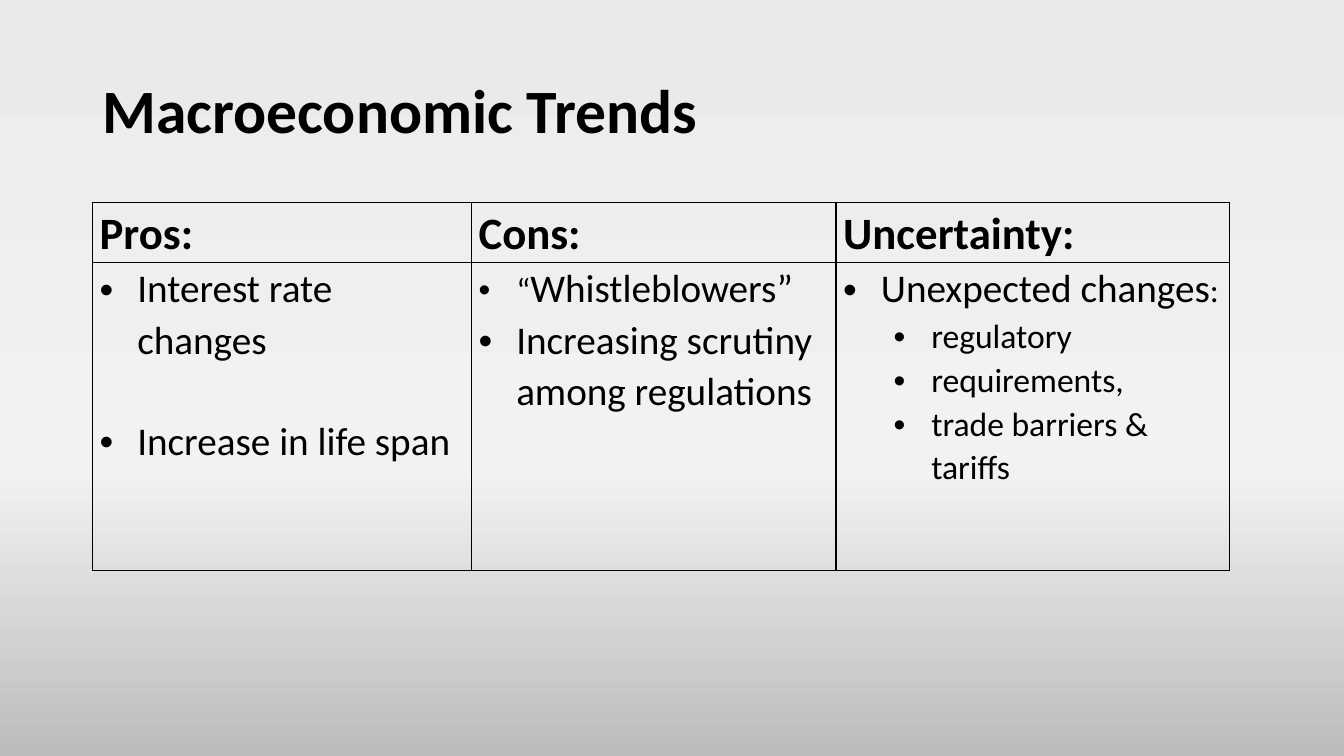
"""Build the Macroeconomic Trends slide."""
from copy import deepcopy
from dataclasses import dataclass

from lxml import etree
from pptx import Presentation
from pptx.dml.color import RGBColor
from pptx.enum.text import MSO_ANCHOR
from pptx.oxml.ns import qn
from pptx.util import Cm, Pt

MIDDLE = MSO_ANCHOR.MIDDLE


@dataclass(frozen=True)
class Theme:
    """Colours, font and type sizes of the slide."""

    font: str = "Calibri"
    ink: str = "000000"
    backdrop: tuple = ((0, "EBEAEA"), (0.62, "F2F2F2"), (1, "BDBCBC"))
    title: int = 44
    heading: int = 32
    body: int = 28
    detail: int = 24
    title_spacing: float = 0.9
    table_spacing: float = 1.07
    border: int = 1


THEME = Theme()
HANGING = Cm(0.95)
INDENTS = (HANGING, Cm(2.22))
COLUMN_WIDTHS = (Cm(9.55), Cm(9.19), Cm(9.91))
ROW_HEIGHTS = (Cm(1.5), Cm(7.77))

# Each point is (level, space before in points, runs of text and size).
TRENDS = {
    "Pros:": [
        (0, 0, [("Interest rate changes", THEME.body)]),
        (0, 36, [("Increase in life span", THEME.body)]),
    ],
    "Cons:": [
        (0, 0, [("“", THEME.detail), ("Whistleblowers”", THEME.body)]),
        (0, 0, [("Increasing scrutiny among regulations", THEME.body)]),
    ],
    "Uncertainty:": [
        (0, 0, [("Unexpected changes", THEME.body), (":", THEME.detail)]),
        (1, 0, [("regulatory", THEME.detail)]),
        (1, 0, [("requirements,", THEME.detail)]),
        (1, 0, [("trade barriers & tariffs", THEME.detail)]),
    ],
}


def paint_background(slide):
    """Fill the slide with a vertical three-stop gradient."""
    fill = slide.background.fill
    fill.gradient()
    fill.gradient_angle = 270
    stop_list = next(slide.element.iter(qn("a:gsLst")))
    stop_list.append(deepcopy(stop_list[-1]))
    for stop, (position, colour) in zip(fill.gradient_stops, THEME.backdrop):
        stop.position = position
        stop.color.rgb = RGBColor.from_string(colour)


def add_run(paragraph, text, size, bold=False):
    """Append one run in the theme font and colour."""
    run = paragraph.add_run()
    run.text = text
    run.font.name = THEME.font
    run.font.size = Pt(size)
    run.font.bold = bold
    run.font.color.rgb = RGBColor.from_string(THEME.ink)


def add_title(slide, text):
    """Add the bold slide title."""
    frame = slide.shapes.add_textbox(Cm(2.33), Cm(1.02), Cm(29.21), Cm(3.68)).text_frame
    frame.word_wrap = True
    frame.vertical_anchor = MIDDLE
    heading = frame.paragraphs[0]
    heading.line_spacing = THEME.title_spacing
    add_run(heading, text, THEME.title, bold=True)


def add_bullet(paragraph, level):
    """Give a paragraph a hanging round bullet."""
    paragraph.level = level
    properties = paragraph._p.get_or_add_pPr()
    properties.set("marL", str(INDENTS[level]))
    properties.set("indent", str(-HANGING))
    etree.SubElement(properties, qn("a:buFont"), typeface="Arial")
    etree.SubElement(properties, qn("a:buChar"), char="•")


def style_cell(cell):
    """Make a cell clear, with narrow margins and a thin border all round."""
    cell.margin_left = cell.margin_right = Cm(0.18)
    cell.margin_top = cell.margin_bottom = 0
    cell.fill.background()
    properties = cell._tc.get_or_add_tcPr()
    for index, side in enumerate(("a:lnL", "a:lnR", "a:lnT", "a:lnB")):
        line = etree.Element(qn(side), w=str(Pt(THEME.border)))
        solid = etree.SubElement(line, qn("a:solidFill"))
        etree.SubElement(solid, qn("a:srgbClr"), val=THEME.ink)
        properties.insert(index, line)


def fill_heading(cell, text):
    """Write a bold column heading."""
    style_cell(cell)
    paragraph = cell.text_frame.paragraphs[0]
    paragraph.line_spacing = THEME.table_spacing
    add_run(paragraph, text, THEME.heading, bold=True)


def fill_points(cell, points):
    """Write the bulleted points of a column."""
    style_cell(cell)
    frame = cell.text_frame
    for index, (level, gap, runs) in enumerate(points):
        paragraph = frame.add_paragraph() if index else frame.paragraphs[0]
        paragraph.line_spacing = THEME.table_spacing
        paragraph.space_before = Pt(gap)
        add_bullet(paragraph, level)
        for text, size in runs:
            add_run(paragraph, text, size)


def add_trends_table(slide, trends):
    """Add the table with one column per kind of trend."""
    table = slide.shapes.add_table(
        len(ROW_HEIGHTS), len(trends), Cm(2.33), Cm(5.11),
        sum(COLUMN_WIDTHS), sum(ROW_HEIGHTS),
    ).table
    table.first_row = table.horz_banding = False
    for row, height in zip(table.rows, ROW_HEIGHTS):
        row.height = height
    for index, (heading, points) in enumerate(trends.items()):
        table.columns[index].width = COLUMN_WIDTHS[index]
        fill_heading(table.cell(0, index), heading)
        fill_points(table.cell(1, index), points)


def main():
    """Build and save the slide."""
    deck = Presentation()
    deck.slide_width, deck.slide_height = Cm(33.87), Cm(19.05)
    slide = deck.slides.add_slide(deck.slide_layouts[6])
    paint_background(slide)
    add_title(slide, "Macroeconomic Trends")
    add_trends_table(slide, TRENDS)
    deck.save("out.pptx")


if __name__ == "__main__":
    main()
